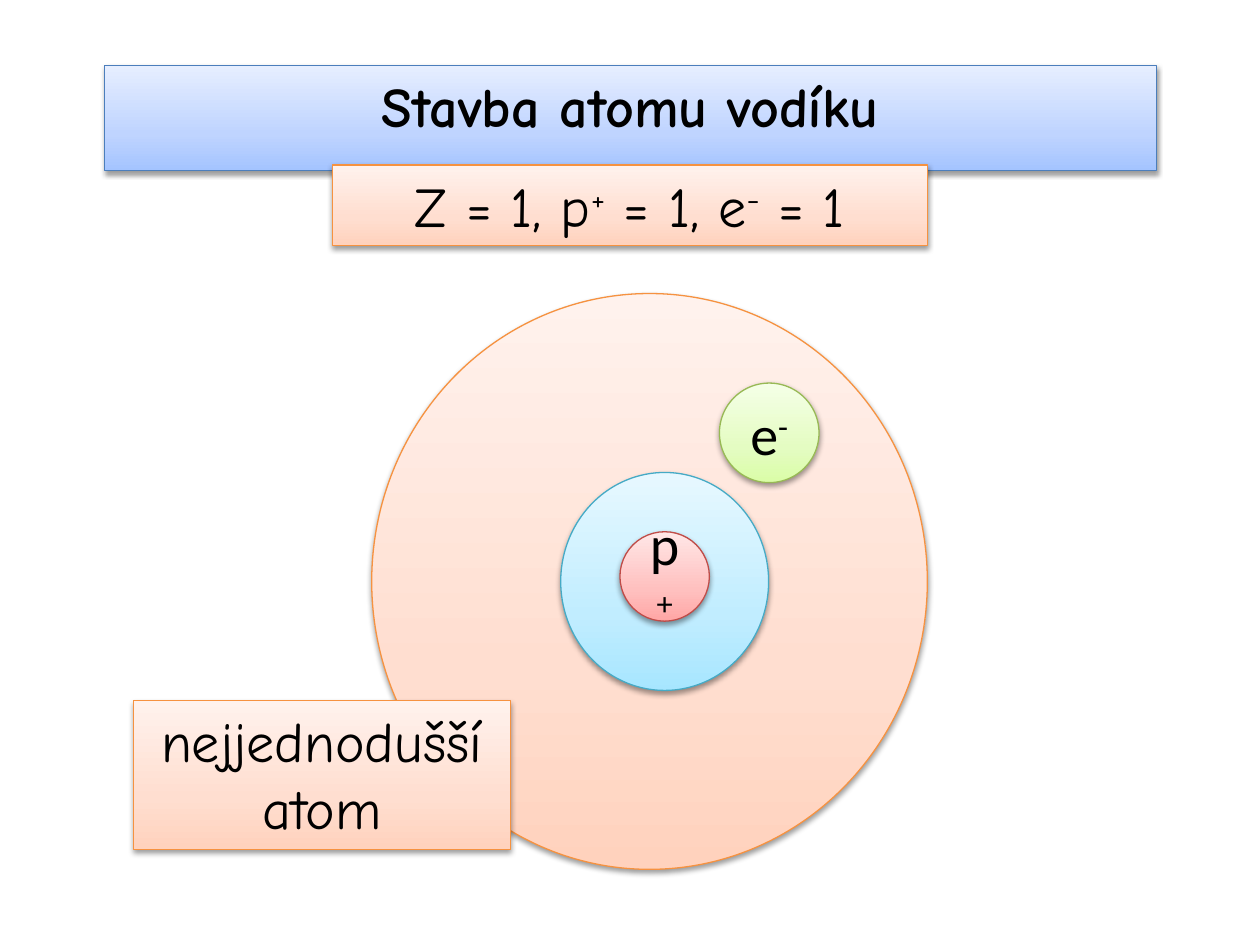
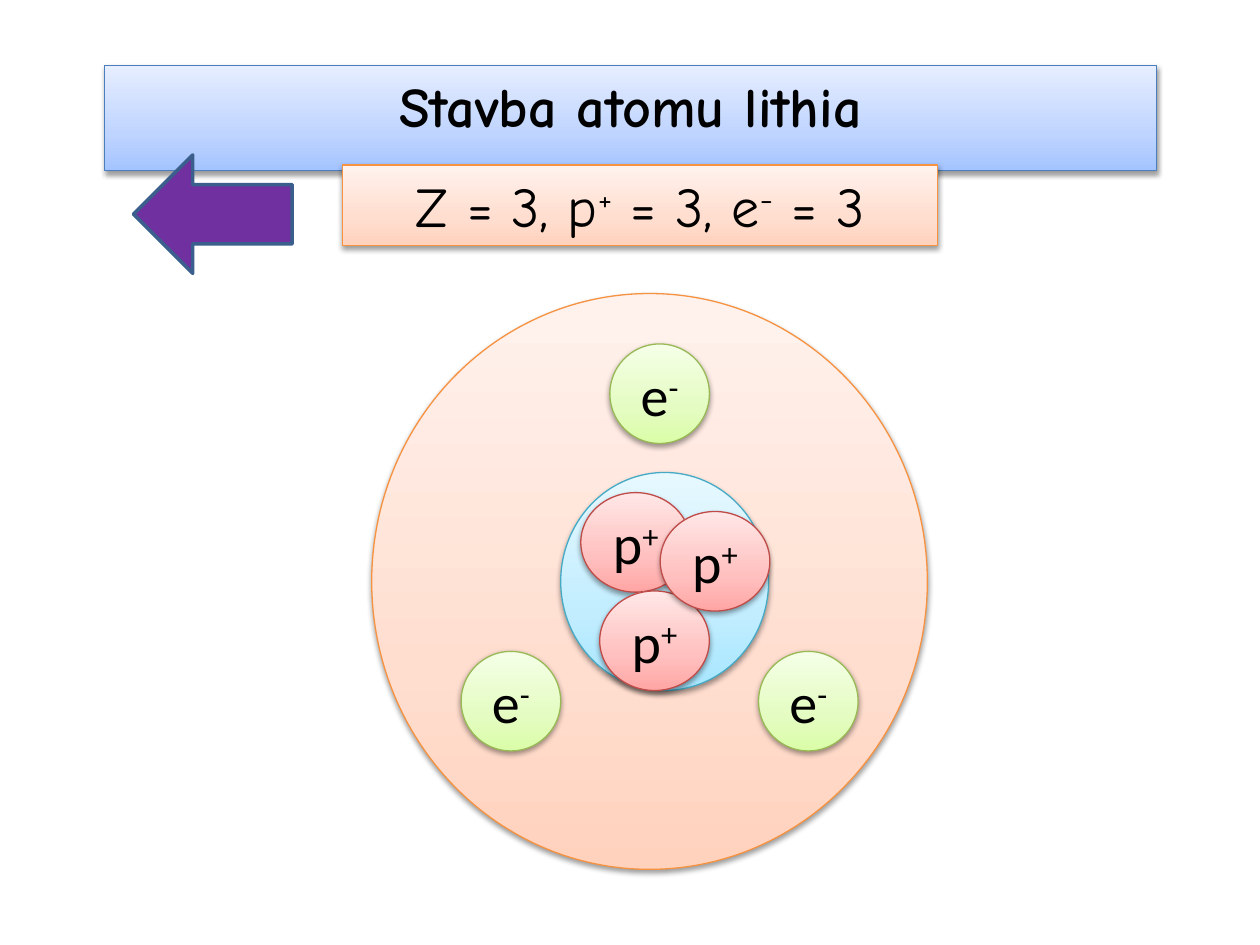
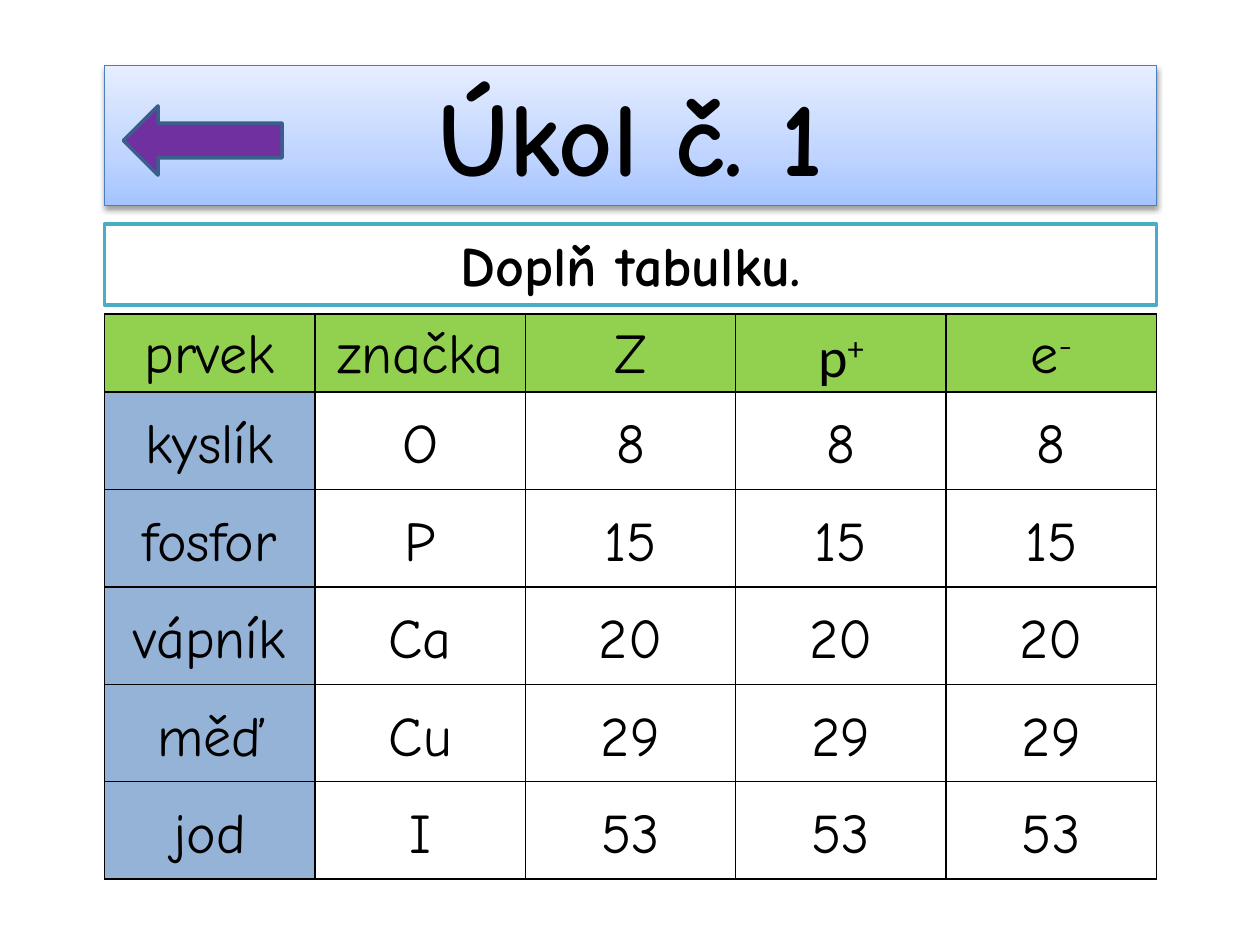
from dataclasses import dataclass

from lxml.etree import SubElement
from pptx import Presentation
from pptx.dml.color import RGBColor
from pptx.enum.shapes import MSO_SHAPE
from pptx.enum.text import MSO_ANCHOR, MSO_AUTO_SIZE, PP_ALIGN
from pptx.oxml import parse_xml
from pptx.oxml.ns import nsdecls, qn
from pptx.shapes.autoshape import Shape
from pptx.slide import Slide
from pptx.table import _Cell
from pptx.text.text import TextFrame
from pptx.util import Inches, Pt

FONT = "Comic Neue"
SYMBOL_FONT = "Calibri"
LEFT, WIDTH = 0.83, 8.35
TITLE_TOP, BAND_H = 0.52, 0.64
ELECTRON_D = 0.79

COLORS = {
    "text": "000000",
    "arrow": "7030A0",
    "arrow_line": "3A5F8C",
    "task": "FFFFFF",
    "task_line": "4BACC6",
    "header": "92D050",
    "element": "95B3D7",
    "border": "000000",
}


@dataclass(frozen=True)
class Theme:
    bottom: str
    middle: str
    top: str
    line: str


THEMES = {
    "blue": Theme("A4C4FF", "BFD4FF", "E6EEFF", "4B7EBC"),
    "orange": Theme("FFD2BD", "FFDED0", "FFF2ED", "F69240"),
    "cyan": Theme("A7E6FF", "C1EDFF", "E7F8FF", "46AAC5"),
    "red": Theme("FFA6A5", "FFC0BF", "FFE7E7", "BF4C48"),
    "green": Theme("DAFDA7", "E4FCC2", "F5FFE7", "98B955"),
}


@dataclass(frozen=True)
class Box:
    left: float
    top: float
    width: float
    height: float

    def lengths(self) -> list[int]:
        return [Inches(v) for v in (self.left, self.top, self.width, self.height)]


@dataclass(frozen=True)
class Particle:
    symbol: str
    theme: str
    box: Box


def electron(left: float, top: float) -> Particle:
    return Particle("e^-", "green", Box(left, top, ELECTRON_D, ELECTRON_D))


def proton(left: float, top: float, width: float = 0.87, height: float = 0.79) -> Particle:
    return Particle("p^+", "red", Box(left, top, width, height))


def rgb(name: str) -> RGBColor:
    return RGBColor.from_string(COLORS[name])


def set_text(tf: TextFrame, text: str, *, size: float = 32, font: str = FONT,
             bold: bool = False, spacing: float = 1.0) -> None:
    p = tf.paragraphs[0]
    p.alignment = PP_ALIGN.CENTER
    p.line_spacing = spacing
    for i, part in enumerate(text.split("^")):
        r = p.add_run()
        r.text = part
        r.font.name = font
        r.font.size = Pt(size)
        r.font.bold = bold
        r.font.color.rgb = rgb("text")
        if i % 2:
            r.font._element.set("baseline", "30000")


def fit_band(tf: TextFrame) -> None:
    tf.word_wrap = True
    tf.vertical_anchor = MSO_ANCHOR.TOP
    tf.auto_size = MSO_AUTO_SIZE.SHAPE_TO_FIT_TEXT


def apply_theme(sp: Shape, name: str) -> None:
    theme = THEMES[name]
    sp.fill.gradient()
    grad = sp._element.spPr.find(qn("a:gradFill"))
    stops = grad.find(qn("a:gsLst"))
    for stop in list(stops):
        stops.remove(stop)
    for pos, color in ((0, theme.bottom), (35, theme.middle), (100, theme.top)):
        gs = SubElement(stops, qn("a:gs"), pos=str(pos * 1000))
        SubElement(gs, qn("a:srgbClr"), val=color)
    grad.find(qn("a:lin")).set("ang", "16200000")
    sp.line.color.rgb = RGBColor.from_string(theme.line)
    sp.line.width = Pt(0.75)
    sp._element.spPr.append(parse_xml(
        f'<a:effectLst {nsdecls("a")}><a:outerShdw blurRad="40000" dist="20000" '
        'dir="5400000" rotWithShape="0"><a:srgbClr val="000000">'
        '<a:alpha val="38000"/></a:srgbClr></a:outerShdw></a:effectLst>'))


def add_themed(s: Slide, kind: MSO_SHAPE, box: Box, theme: str) -> Shape:
    sp = s.shapes.add_shape(kind, *box.lengths())
    apply_theme(sp, theme)
    return sp


def add_flat(s: Slide, kind: MSO_SHAPE, box: Box, color: str) -> Shape:
    sp = s.shapes.add_shape(kind, *box.lengths())
    sp.shadow.inherit = False
    sp.fill.solid()
    sp.fill.fore_color.rgb = rgb(color)
    sp.line.color.rgb = rgb(f"{color}_line")
    sp.line.width = Pt(2)
    return sp


def add_label(s: Slide, text: str, box: Box) -> None:
    sp = add_themed(s, MSO_SHAPE.RECTANGLE, box, "orange")
    fit_band(sp.text_frame)
    set_text(sp.text_frame, text)


def add_slide(prs: Presentation, title: str, *, height: float = BAND_H, size: float = 32) -> Slide:
    s = prs.slides.add_slide(prs.slide_layouts[5])
    sp = s.shapes.title
    sp.left, sp.top, sp.width, sp.height = Box(LEFT, TITLE_TOP, WIDTH, height).lengths()
    apply_theme(sp, "blue")
    fit_band(sp.text_frame)
    set_text(sp.text_frame, title, size=size, bold=True)
    return s


def add_atom_slide(prs: Presentation, title: str, number: int, label_left: float,
                   particles: list[Particle]) -> Slide:
    s = add_slide(prs, title)
    add_themed(s, MSO_SHAPE.OVAL, Box(2.95, 2.33, 4.41, 4.57), "orange")
    add_themed(s, MSO_SHAPE.OVAL, Box(4.45, 3.75, 1.65, 1.73), "cyan")
    for particle in particles:
        sp = add_themed(s, MSO_SHAPE.OVAL, particle.box, particle.theme)
        tf = sp.text_frame
        tf.word_wrap = True
        tf.vertical_anchor = MSO_ANCHOR.MIDDLE
        set_text(tf, particle.symbol, font=SYMBOL_FONT)
    add_label(s, f"Z = {number}, p^+^ = {number}, e^-^ = {number}",
              Box(label_left, 1.31, 4.72, BAND_H))
    return s


def add_borders(cell: _Cell) -> None:
    tc_pr = cell._tc.get_or_add_tcPr()
    for side in ("lnL", "lnR", "lnT", "lnB"):
        ln = SubElement(tc_pr, qn(f"a:{side}"), w=str(Pt(1)))
        fill = SubElement(ln, qn("a:solidFill"))
        SubElement(fill, qn("a:srgbClr"), val=COLORS["border"])


def add_elements_table(s: Slide, box: Box, header_h: float, rows: list[list[str]]) -> None:
    columns = len(rows[0])
    table = s.shapes.add_table(len(rows), columns, *box.lengths()).table
    table.first_row = table.horz_banding = False
    for column in table.columns:
        column.width = Inches(box.width / columns)
    for i, values in enumerate(rows):
        row_h = header_h if i == 0 else (box.height - header_h) / (len(rows) - 1)
        table.rows[i].height = Inches(row_h)
        for j, value in enumerate(values):
            cell = table.cell(i, j)
            cell.margin_left = cell.margin_right = Inches(0.07)
            cell.margin_top = cell.margin_bottom = 0
            cell.vertical_anchor = MSO_ANCHOR.MIDDLE if i else MSO_ANCHOR.TOP
            add_borders(cell)
            if i == 0 or j == 0:
                cell.fill.solid()
                cell.fill.fore_color.rgb = rgb("element" if i else "header")
            else:
                cell.fill.background()
            font = SYMBOL_FONT if value == "p^+" else FONT
            set_text(cell.text_frame, value, font=font, spacing=1.15)


def add_task_slide(prs: Presentation) -> None:
    s = add_slide(prs, "Úkol č. 1", height=1.11, size=60)
    elements = [("kyslík", "O", 8), ("fosfor", "P", 15), ("vápník", "Ca", 20),
                ("měď", "Cu", 29), ("jod", "I", 53)]
    rows = [["prvek", "značka", "Z", "p^+", "e^-"]]
    rows += [[name, symbol] + [str(number)] * 3 for name, symbol, number in elements]
    add_elements_table(s, Box(LEFT, 2.49, WIDTH, 4.49), 0.62, rows)
    sp = add_flat(s, MSO_SHAPE.RECTANGLE, Box(LEFT, 1.78, WIDTH, BAND_H), "task")
    fit_band(sp.text_frame)
    set_text(sp.text_frame, "Doplň tabulku.", bold=True)
    add_flat(s, MSO_SHAPE.LEFT_ARROW, Box(0.98, 0.84, 1.26, 0.55), "arrow")


def main() -> None:
    prs = Presentation()
    prs.slide_width, prs.slide_height = Inches(10), Inches(7.5)

    s = add_atom_slide(prs, "Stavba atomu vodíku", 1, 2.64,
                       [proton(4.92, 4.22, 0.71, 0.71), electron(5.71, 3.04)])
    add_label(s, "nejjednodušší atom", Box(1.06, 5.56, 2.99, 1.18))

    s = add_atom_slide(prs, "Stavba atomu lithia", 3, 2.72,
                       [proton(4.61, 3.91), electron(4.84, 2.73), proton(4.76, 4.69),
                        electron(3.66, 5.17), electron(6.02, 5.17), proton(5.24, 4.06)])
    add_flat(s, MSO_SHAPE.LEFT_ARROW, Box(1.06, 1.23, 1.26, 0.94), "arrow")

    add_task_slide(prs)
    prs.save("out.pptx")


if __name__ == "__main__":
    main()
